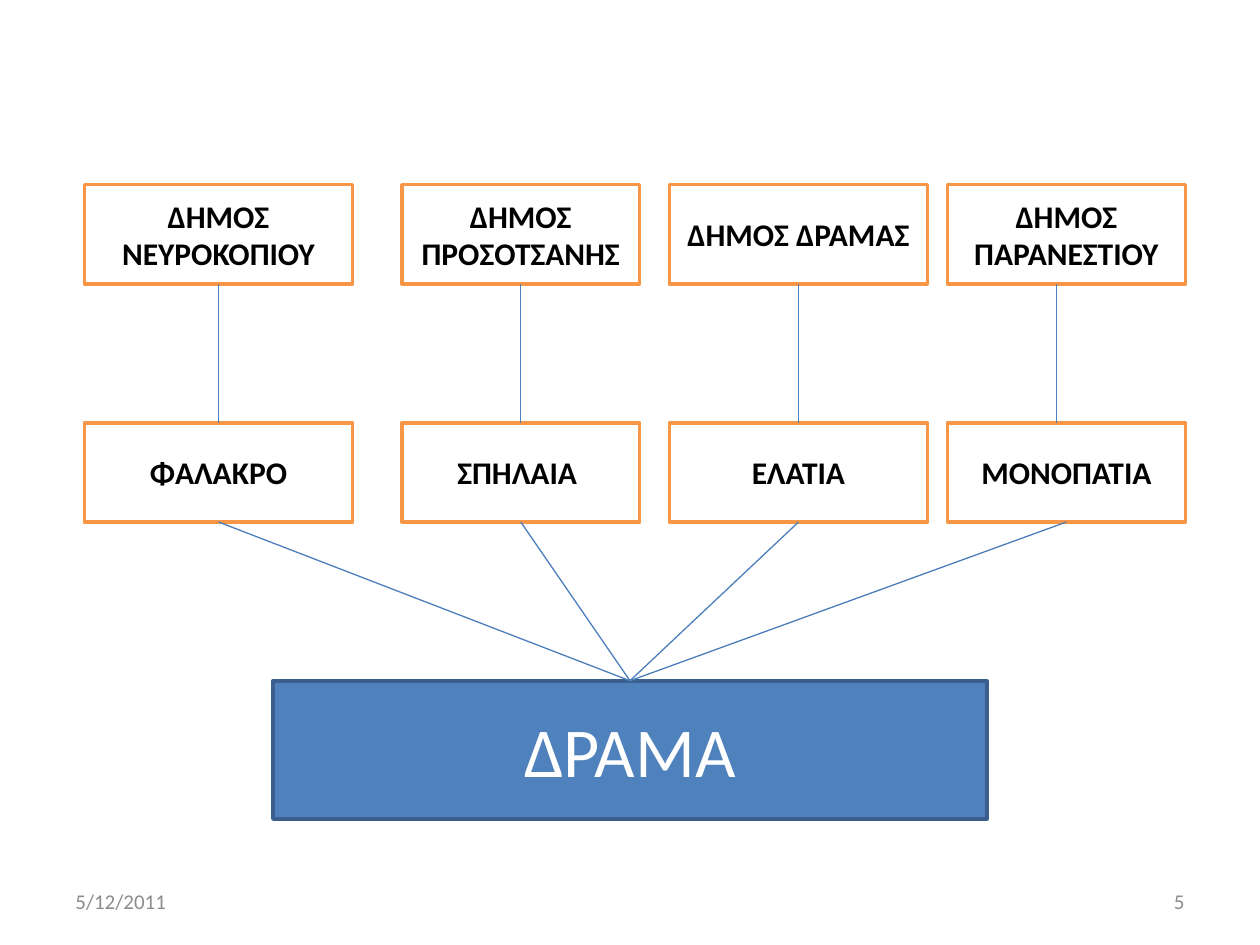
from lxml.etree import SubElement
from pptx import Presentation
from pptx.dml.color import RGBColor
from pptx.enum.shapes import MSO_CONNECTOR as Connector, MSO_SHAPE as Shape
from pptx.enum.text import MSO_ANCHOR as Anchor, PP_ALIGN as Align
from pptx.oxml.ns import qn
from pptx.util import Pt

WHITE = RGBColor(0xFF, 0xFF, 0xFF)
BLACK = RGBColor(0, 0, 0)
ORANGE = RGBColor(0xF7, 0x96, 0x46)
BLUE = RGBColor(0x4F, 0x81, 0xBD)
DARK_BLUE = RGBColor(0x3A, 0x5F, 0x8C)
LINK_BLUE = RGBColor(0x4B, 0x7E, 0xBC)
GREY = RGBColor(0x8C, 0x8C, 0x8C)

TOP, BOTTOM = 0, 2
BOX_HEIGHT = 56.7
PLACE_OFFSET = 136
ROOT_AREA = (156, 389, 408, 79)
FOOTER_AREA = (36, 500.5, 648, 28.75)
COLUMNS_TOP = 105.6

# left, width, municipality, place, shift of the upper link from the centre
COLUMNS = [
    (48.2, 153.4, "ΔΗΜΟΣ ΝΕΥΡΟΚΟΠΙΟΥ", "ΦΑΛΑΚΡΟ", 0),
    (229.6, 136, "ΔΗΜΟΣ ΠΡΟΣΟΤΣΑΝΗΣ", "ΣΠΗΛΑΙΑ ", 0),
    (382.6, 147.4, "ΔΗΜΟΣ ΔΡΑΜΑΣ", "ΕΛΑΤΙΑ", 0),
    (541.4, 136, "ΔΗΜΟΣ ΠΑΡΑΝΕΣΤΙΟΥ", "ΜΟΝΟΠΑΤΙΑ", -5.6),
]


def write_text(shape, text, size, color, align, bold=False):
    """Put one formatted run into a shape, centred vertically."""
    frame = shape.text_frame
    frame.word_wrap = True
    frame.vertical_anchor = Anchor.MIDDLE
    para = frame.paragraphs[0]
    para.alignment = align
    span = para.add_run()
    span.text = text
    span.font.name = "Calibri"
    span.font.size = Pt(size)
    span.font.bold = bold
    span.font.color.rgb = color


def add_box(page, area, text, size, color, fill, border, bold=False):
    """Add a bordered rectangle with centred text."""
    box = page.shapes.add_shape(Shape.RECTANGLE, *map(Pt, area))
    box.shadow.inherit = False
    box.fill.solid()
    box.fill.fore_color.rgb = fill
    box.line.color.rgb = border
    box.line.width = Pt(2)
    write_text(box, text, size, color, Align.CENTER, bold)
    return box


def add_link(page, upper, lower, shift=0):
    """Link two boxes, or draw a loose vertical line beside the centre."""
    middle = upper.left + upper.width // 2 + Pt(shift)
    link = page.shapes.add_connector(
        Connector.STRAIGHT, middle, upper.top + upper.height, middle, lower.top)
    if not shift:
        link.begin_connect(upper, BOTTOM)
        link.end_connect(lower, TOP)
    link.line.color.rgb = LINK_BLUE
    link.line.width = Pt(0.75)
    SubElement(link._element.spPr, qn("a:effectLst"))


def add_column(page, area, municipality, place, shift, root):
    """Stack a municipality above its place and link both down to the root."""
    left, top, width = area
    upper, lower = [
        add_box(page, (left, top + offset, width, BOX_HEIGHT),
                text, 18, BLACK, WHITE, ORANGE, bold=True)
        for offset, text in ((0, municipality), (PLACE_OFFSET, place))
    ]
    add_link(page, upper, lower, shift)
    add_link(page, lower, root)


def add_footer(page, area, date, number):
    """Place the date at the left end and the page number at the right end."""
    left, top, width, height = area
    part = 168
    for start, text, align in ((left, date, Align.LEFT),
                               (left + width - part, number, Align.RIGHT)):
        box = page.shapes.add_textbox(*map(Pt, (start, top, part, height)))
        write_text(box, text, 12, GREY, align)


def main():
    """Build the deck and save it."""
    deck = Presentation()
    deck.slide_width, deck.slide_height = Pt(720), Pt(540)
    page = deck.slides.add_slide(deck.slide_layouts[6])
    root = add_box(page, ROOT_AREA, "ΔΡΑΜΑ", 40, WHITE, BLUE, DARK_BLUE)
    for left, width, municipality, place, shift in COLUMNS:
        add_column(page, (left, COLUMNS_TOP, width), municipality, place, shift, root)
    add_footer(page, FOOTER_AREA, "5/12/2011", "5")
    deck.save("out.pptx")


if __name__ == "__main__":
    main()
